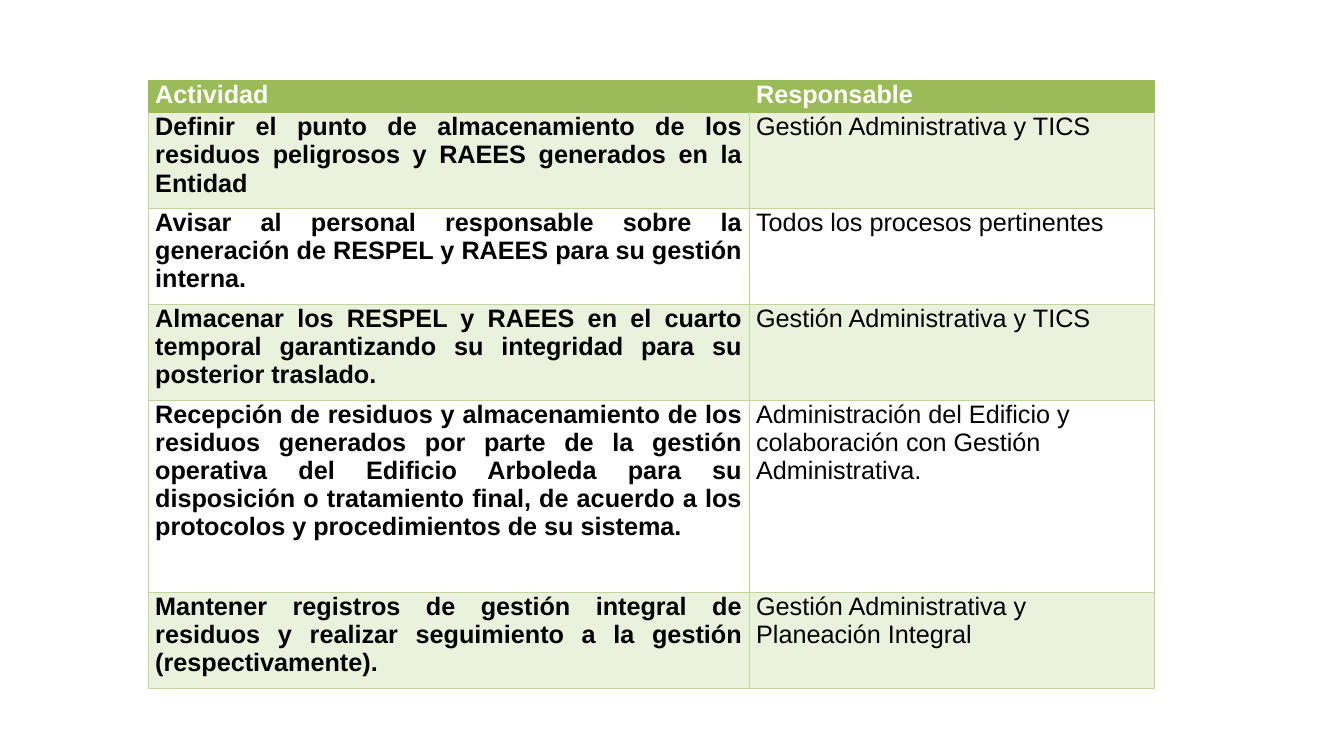
from lxml import etree
from pptx import Presentation
from pptx.dml.color import RGBColor
from pptx.enum import text
from pptx.oxml.ns import qn
from pptx.util import Inches, Pt

GREEN, SOFT_GREEN, PALE_GREEN = "9BBB59", "C2D69B", "EAF1DD"
COLUMN_WIDTHS = [5.96, 4.02]
ROW_HEIGHTS = [0.32, 0.95, 0.95, 0.95, 1.91, 0.95]
HEADINGS = ("Actividad", "Responsable")
ACTIVITIES = [
    ("Definir el punto de almacenamiento de los residuos peligrosos y RAEES "
     "generados en la Entidad",
     "Gestión Administrativa y TICS"),
    ("Avisar al personal responsable sobre la generación de RESPEL y RAEES "
     "para su gestión interna.",
     "Todos los procesos pertinentes"),
    ("Almacenar los RESPEL y RAEES en el cuarto temporal garantizando su "
     "integridad para su posterior traslado.",
     "Gestión Administrativa y TICS"),
    ("Recepción de residuos y almacenamiento de los residuos generados por "
     "parte de la gestión operativa del Edificio Arboleda para su disposición "
     "o tratamiento final, de acuerdo a los protocolos y procedimientos de su "
     "sistema.",
     "Administración del Edificio y colaboración con Gestión Administrativa."),
    ("Mantener registros de gestión integral de residuos y realizar "
     "seguimiento a la gestión (respectivamente).",
     "Gestión Administrativa y Planeación Integral"),
]
MARGINS = {"margin_left": Inches(0.07), "margin_right": Inches(0.07),
           "margin_top": 0, "margin_bottom": 0}


def rgb(value):
    return RGBColor.from_string(value)


def set_attributes(target, values):
    for name, value in values.items():
        setattr(target, name, value)


def set_borders(cell, colors):
    """Draw 1 pt borders; colors run left, right, top, bottom."""
    properties = cell._tc.get_or_add_tcPr()
    for side, color in zip("LRTB", colors):
        border = etree.SubElement(properties, qn(f"a:ln{side}"), w=str(Pt(1)))
        fill = etree.SubElement(border, qn("a:solidFill"))
        etree.SubElement(fill, qn("a:srgbClr"), val=color)


def write_cell(cell, wording, color, bold, align):
    set_attributes(cell, MARGINS)
    paragraph = cell.text_frame.paragraphs[0]
    paragraph.alignment = align
    run = paragraph.add_run()
    run.text = wording
    set_attributes(run.font, {"name": "Arial", "size": Pt(18), "bold": bold})
    run.font.color.rgb = rgb(color)


def fill_cell(cell, color):
    if color:
        cell.fill.solid()
        cell.fill.fore_color.rgb = rgb(color)
    else:
        cell.fill.background()


def add_responsibility_table(slide):
    rows = [HEADINGS] + ACTIVITIES
    table = slide.shapes.add_table(
        len(rows), len(HEADINGS), Inches(1.47), Inches(0.8),
        Inches(sum(COLUMN_WIDTHS)), Inches(sum(ROW_HEIGHTS))).table
    set_attributes(table, {"first_row": False, "horz_banding": False})
    for column, width in zip(table.columns, COLUMN_WIDTHS):
        column.width = Inches(width)

    for r, wordings in enumerate(rows):
        table.rows[r].height = Inches(ROW_HEIGHTS[r])
        heading = r == 0
        side = GREEN if heading else SOFT_GREEN
        top = GREEN if r <= 1 else SOFT_GREEN
        # Odd activity rows are shaded
        shade = GREEN if heading else PALE_GREEN if r % 2 else None
        for c, wording in enumerate(wordings):
            cell = table.cell(r, c)
            activity = c == 0 and not heading
            align = text.PP_ALIGN.JUSTIFY if activity else text.PP_ALIGN.LEFT
            write_cell(cell, wording, "FFFFFF" if heading else "000000",
                       heading or activity, align)
            set_borders(cell, (side, side, top, side))
            fill_cell(cell, shade)


def main():
    deck = Presentation()
    set_attributes(deck, {"slide_width": Inches(13.33),
                          "slide_height": Inches(7.5)})
    # Blank layout: the slide has no title
    slide = deck.slides.add_slide(deck.slide_layouts[6])
    add_responsibility_table(slide)
    deck.save("out.pptx")


if __name__ == "__main__":
    main()
